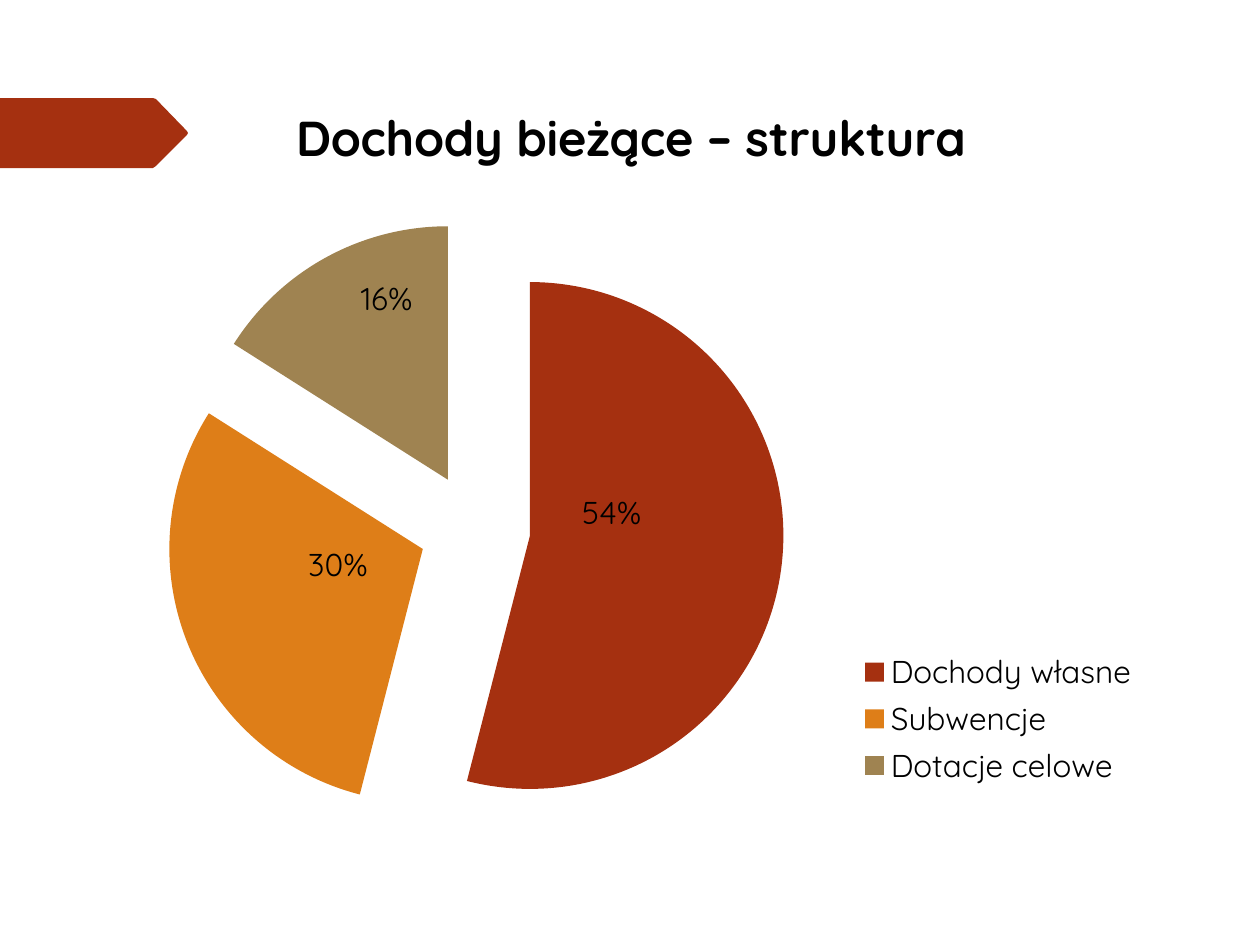
from dataclasses import dataclass

from lxml import etree
from pptx import Presentation
from pptx.chart.data import CategoryChartData
from pptx.dml.color import RGBColor
from pptx.enum.chart import XL_CHART_TYPE, XL_LABEL_POSITION, XL_LEGEND_POSITION
from pptx.oxml.ns import qn
from pptx.util import Pt

PIE = XL_CHART_TYPE.PIE
CENTER = XL_LABEL_POSITION.CENTER
RIGHT = XL_LEGEND_POSITION.RIGHT
EMU_PER_PX = 914400 // 126
BLANK_LAYOUT = 6


@dataclass(frozen=True)
class Theme:
    font: str = "Quicksand"
    text: str = "000000"
    accent: str = "A53010"
    slices: tuple = ("A53010", "DE7E18", "9F8351")
    title_size: int = 28
    body_size: int = 18


def px(length):
    return length * EMU_PER_PX


def add_element(parent, tag, value):
    return etree.SubElement(parent, qn(tag), val=str(value))


def place(element, position, after=None, inner=False):
    """Give a chart part a manual layout of x, y and optionally w, h fractions."""
    for old in element.findall(qn("c:layout")):
        element.remove(old)
    layout = etree.Element(qn("c:layout"))
    manual = etree.SubElement(layout, qn("c:manualLayout"))
    if inner:
        add_element(manual, "c:layoutTarget", "inner")
    if element.tag != qn("c:dLbl"):
        add_element(manual, "c:xMode", "edge")
        add_element(manual, "c:yMode", "edge")
    for name, value in zip("xywh", position):
        add_element(manual, f"c:{name}", value)
    if after:
        element.find(qn(after)).addnext(layout)
    else:
        element.insert(0, layout)


class SlideBuilder:
    def __init__(self, slide, theme):
        self.slide = slide
        self.theme = theme

    def style_font(self, font, size, bold=False):
        font.name = self.theme.font
        font.size = Pt(size)
        font.bold = bold
        font.color.rgb = RGBColor.from_string(self.theme.text)

    def fill(self, target, color):
        target.fill.solid()
        target.fill.fore_color.rgb = RGBColor.from_string(color)
        target.line.fill.background()

    def add_outline(self, points, color):
        start, *rest = points
        builder = self.slide.shapes.build_freeform(*start, scale=EMU_PER_PX)
        builder.add_line_segments(rest, close=True)
        shape = builder.convert_to_shape()
        shape.shadow.inherit = False
        self.fill(shape, color)

    def add_pie(self, box, title, values, label_shifts, explosion):
        data = CategoryChartData()
        data.categories = values.keys()
        data.add_series("Series 1", values.values())
        frame = self.slide.shapes.add_chart(PIE, *map(px, box), data)
        chart = frame.chart
        self.style_font(chart.font, self.theme.body_size)
        self.add_chart_title(chart, title)
        chart.plots[0].vary_by_categories = True
        self.style_slices(chart, label_shifts, explosion)
        self.add_legend(chart)
        plot_area = chart.element.find(".//" + qn("c:plotArea"))
        place(plot_area, (0.13, 0.25, 0.46, 0.66), inner=True)

    def add_chart_title(self, chart, text):
        chart.has_title = True
        title = chart.chart_title
        run = title.text_frame.paragraphs[0].add_run()
        run.text = text
        self.style_font(run.font, self.theme.title_size, bold=True)
        title.include_in_layout = False
        place(chart.element.find(".//" + qn("c:title")), (0.19, 0.02), "c:tx")

    def add_legend(self, chart):
        chart.has_legend = True
        legend = chart.legend
        legend.position = RIGHT
        legend.include_in_layout = False
        self.style_font(legend.font, self.theme.body_size)
        element = chart.element.find(".//" + qn("c:legend"))
        place(element, (0.7, 0.73, 0.27, 0.19), "c:legendPos")

    def style_slices(self, chart, label_shifts, explosion):
        series = chart.plots[0].series[0]
        labels = series.data_labels
        labels.show_percentage = True
        labels.show_value = False
        self.style_font(labels.font, self.theme.body_size)
        for index, color in enumerate(self.theme.slices):
            point = series.points[index]
            self.fill(point.format, color)
            self.style_font(point.data_label.font, self.theme.body_size)
            point.data_label.position = CENTER
        for label, shift in zip(chart.element.iter(qn("c:dLbl")), label_shifts):
            label.find(qn("c:showVal")).set("val", "0")
            label.find(qn("c:showPercent")).set("val", "1")
            place(label, shift, "c:idx")
        for point in chart.element.iter(qn("c:dPt")):
            exploded = etree.Element(qn("c:explosion"), val=str(explosion))
            point.find(qn("c:spPr")).addprevious(exploded)


def main():
    presentation = Presentation()
    presentation.slide_width = px(1260)
    presentation.slide_height = px(945)
    layout = presentation.slide_layouts[BLANK_LAYOUT]
    theme = Theme()
    builder = SlideBuilder(presentation.slides.add_slide(layout), theme)

    arrow = [(0, 98), (153, 98), (156, 99), (187, 131), (188, 133),
             (187, 135), (156, 166), (153, 168), (0, 168)]
    builder.add_outline(arrow, theme.accent)
    builder.add_pie(
        box=(78, 78, 1102, 777),
        title="Dochody bieżące – struktura",
        values={"Dochody własne": 54, "Subwencje": 30, "Dotacje celowe": 16},
        label_shifts=[(-0.04, -0.05), (0.03, -0.04), (0, -0.09)],
        explosion=22,
    )
    presentation.save("out.pptx")


if __name__ == "__main__":
    main()
